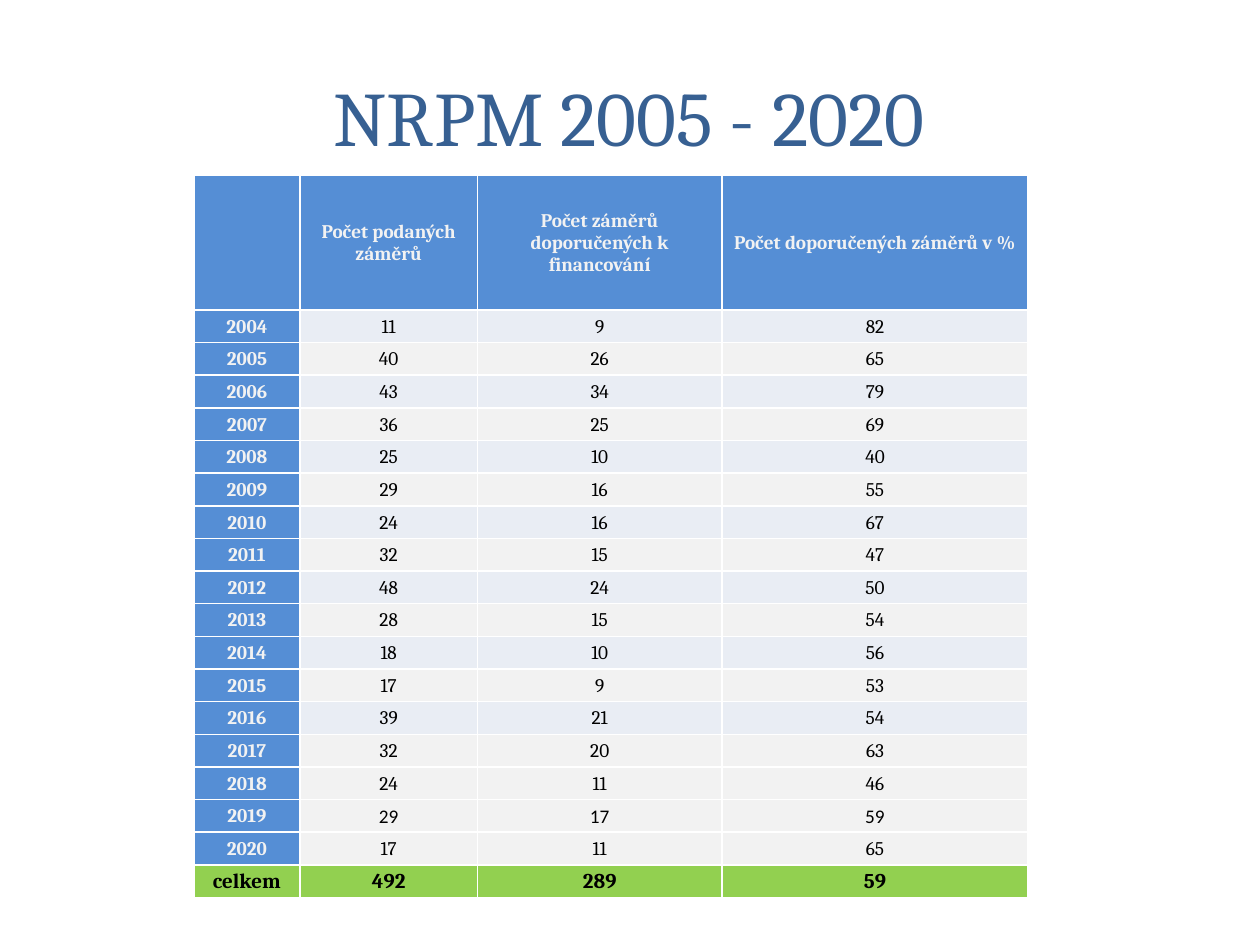
from dataclasses import dataclass

import lxml.etree
import pptx
import pptx.dml.color
import pptx.enum.text
import pptx.oxml.ns
import pptx.util

Inches = pptx.util.Inches
Pt = pptx.util.Pt
Color = pptx.dml.color.RGBColor.from_string


@dataclass(frozen=True)
class Theme:
    font: str = "Cambria"
    alternate_font: str = "Calibri"
    title_color: str = "376092"
    header_fill: str = "558ED5"
    light_text: str = "F2F2F2"
    dark_text: str = "000000"
    blue_band: str = "E9EDF4"
    gray_band: str = "F2F2F2"
    total_fill: str = "92D050"
    border: str = "FFFFFF"
    title_size: int = 44
    body_size: int = 11
    total_size: int = 12


HEADERS = ["", "Počet podaných záměrů", "Počet záměrů doporučených k financování",
           "Počet doporučených záměrů v %"]
RESULTS = [
    (2004, 11, 9, 82), (2005, 40, 26, 65), (2006, 43, 34, 79),
    (2007, 36, 25, 69), (2008, 25, 10, 40), (2009, 29, 16, 55),
    (2010, 24, 16, 67), (2011, 32, 15, 47), (2012, 48, 24, 50),
    (2013, 28, 15, 54), (2014, 18, 10, 56), (2015, 17, 9, 53),
    (2016, 39, 21, 54), (2017, 32, 20, 63), (2018, 24, 11, 46),
    (2019, 29, 17, 59), (2020, 17, 11, 65),
]
TOTAL = ("celkem", 492, 289, 59)
LAST_BANDED_YEAR = 2016
ALTERNATE_FONT_YEAR = 2019
COLUMN_WIDTHS = [0.84, 1.41, 1.94, 2.43]
HEADER_HEIGHT = 1.07
TABLE_HEIGHT = 5.74


class SlideBuilder:
    def __init__(self, deck, theme):
        self.theme = theme
        self.slide = deck.slides.add_slide(deck.slide_layouts[5])

    def add_text(self, frame, text, size, color, bold=False, font=None):
        para = frame.paragraphs[0]
        para.alignment = pptx.enum.text.PP_ALIGN.CENTER
        span = para.add_run()
        span.text = text
        span.font.name = font or self.theme.font
        span.font.size = Pt(size)
        span.font.bold = bold
        span.font.color.rgb = Color(color)

    def title(self, text, left, top, width, height):
        box = self.slide.shapes.title
        box.left, box.top = Inches(left), Inches(top)
        box.width, box.height = Inches(width), Inches(height)
        box.text_frame.vertical_anchor = pptx.enum.text.MSO_ANCHOR.MIDDLE
        self.add_text(box.text_frame, text, self.theme.title_size, self.theme.title_color)

    def table(self, row_count, left, top):
        """Add an empty table with a tall header row and equal rows below it."""
        frame = self.slide.shapes.add_table(
            row_count, len(COLUMN_WIDTHS), Inches(left), Inches(top),
            Inches(sum(COLUMN_WIDTHS)), Inches(TABLE_HEIGHT))
        table = frame.table
        table.horz_banding = False
        for column, width in zip(table.columns, COLUMN_WIDTHS):
            column.width = Inches(width)
        row_height = (TABLE_HEIGHT - HEADER_HEIGHT) / (row_count - 1)
        for index, row in enumerate(table.rows):
            row.height = Inches(row_height if index else HEADER_HEIGHT)
        return table

    def borders(self, cell):
        qn = pptx.oxml.ns.qn
        properties = cell._tc.get_or_add_tcPr()
        for side in ("a:lnL", "a:lnR", "a:lnT", "a:lnB"):
            line = lxml.etree.SubElement(properties, qn(side), w=str(Pt(1)))
            fill = lxml.etree.SubElement(line, qn("a:solidFill"))
            lxml.etree.SubElement(fill, qn("a:srgbClr"), val=self.theme.border)

    def cell(self, cell, text, fill, color, size=None, bold=False, font=None):
        self.borders(cell)
        cell.fill.solid()
        cell.fill.fore_color.rgb = Color(fill)
        cell.margin_left = cell.margin_right = cell.margin_top = Inches(0.01)
        cell.margin_bottom = 0
        cell.vertical_anchor = pptx.enum.text.MSO_ANCHOR.MIDDLE
        if text:
            self.add_text(cell.text_frame, text, size or self.theme.body_size,
                          color, bold, font)

    def header_cell(self, cell, text):
        self.cell(cell, text, self.theme.header_fill, self.theme.light_text, bold=True)

    def results_table(self, left, top):
        theme = self.theme
        table = self.table(len(RESULTS) + 2, left, top)
        for column, text in enumerate(HEADERS):
            self.header_cell(table.cell(0, column), text)

        for row, (year, *values) in enumerate(RESULTS, start=1):
            self.header_cell(table.cell(row, 0), str(year))
            banded = year % 2 == 0 and year <= LAST_BANDED_YEAR
            fill = theme.blue_band if banded else theme.gray_band
            font = theme.alternate_font if year == ALTERNATE_FONT_YEAR else theme.font
            for column, value in enumerate(values, start=1):
                self.cell(table.cell(row, column), str(value), fill,
                          theme.dark_text, font=font)

        for column, value in enumerate(TOTAL):
            self.cell(table.cell(len(RESULTS) + 1, column), str(value),
                      theme.total_fill, theme.dark_text, theme.total_size, bold=True)


def main():
    deck = pptx.Presentation()
    deck.slide_width, deck.slide_height = Inches(10), Inches(7.5)
    page = SlideBuilder(deck, Theme())
    page.title("NRPM 2005 - 2020", 0.6, 0.21, 8.79, 1.42)
    page.results_table(1.54, 1.39)
    deck.save("out.pptx")


if __name__ == "__main__":
    main()
